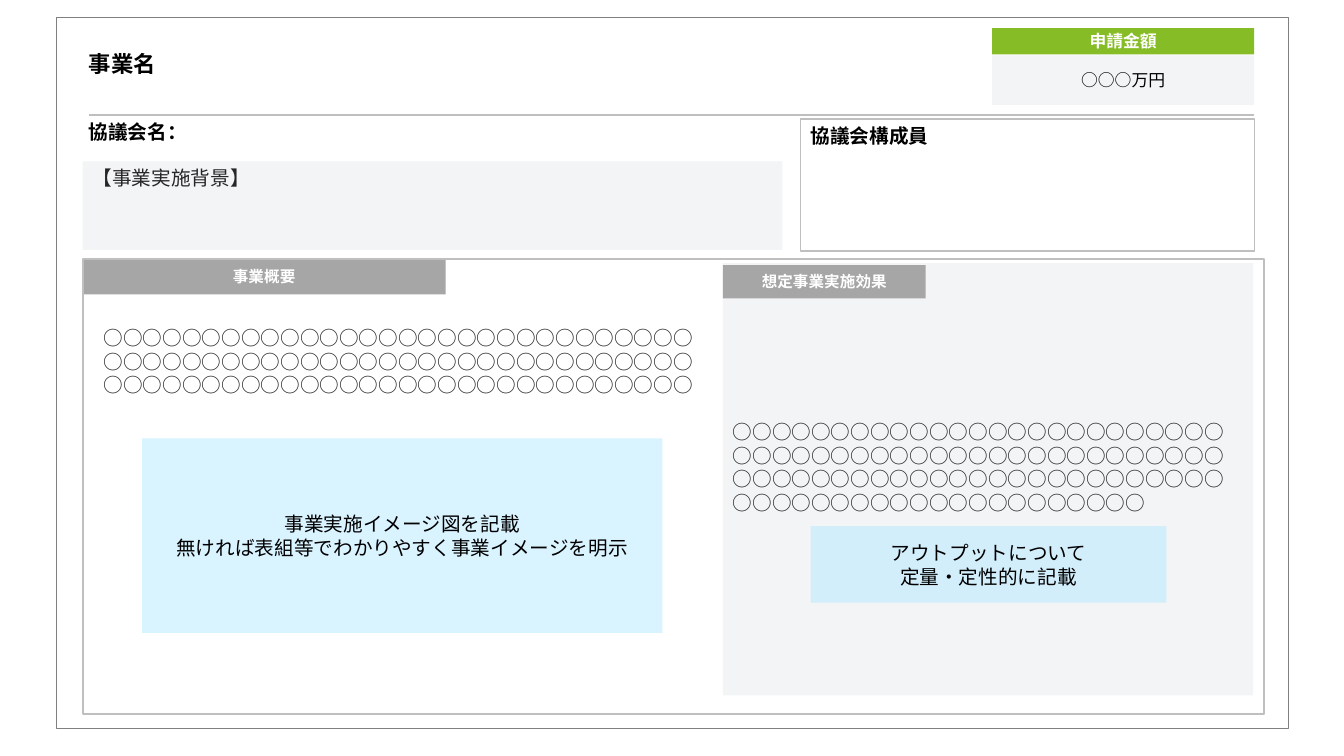
"""Build a one-page project application summary slide."""
from lxml import etree
from pptx import Presentation
from pptx.dml.color import RGBColor
from pptx.enum.shapes import MSO_CONNECTOR, MSO_SHAPE
from pptx.enum.text import MSO_ANCHOR, MSO_AUTO_SIZE, PP_ALIGN
from pptx.oxml.ns import qn
from pptx.util import Pt

PX = 9144
FONT = "Noto Sans CJK JP"
LEFT, CENTER = PP_ALIGN.LEFT, PP_ALIGN.CENTER
TOP, MIDDLE = MSO_ANCHOR.TOP, MSO_ANCHOR.MIDDLE
RECTANGLE, STRAIGHT = MSO_SHAPE.RECTANGLE, MSO_CONNECTOR.STRAIGHT
NO_AUTOFIT = MSO_AUTO_SIZE.NONE
TITLE_ONLY = 5
COLORS = {
    "panel": "F2F4F6", "tab": "A6A6A6", "amount": "86BC25", "figure": "BCEBFF",
    "rule": "BFBFBF", "frame": "808080", "black": "000000", "body": "262626",
    "white": "FFFFFF",
}


def rgb(name):
    return RGBColor.from_string(COLORS[name])


def emu(box):
    return [length * PX for length in box]


def write(holder, lines, size, color="black", bold=False, align=LEFT,
          anchor=TOP, margins=(10, 5, 10, 5)):
    frame = holder.text_frame
    frame.word_wrap = True
    frame.auto_size = NO_AUTOFIT
    frame.vertical_anchor = anchor
    (frame.margin_left, frame.margin_top,
     frame.margin_right, frame.margin_bottom) = emu(margins)
    for index, line in enumerate(lines):
        paragraph = frame.add_paragraph() if index else frame.paragraphs[0]
        paragraph.alignment = align
        run = paragraph.add_run()
        run.text = line
        run.font.size = Pt(size)
        run.font.bold = bold
        run.font.color.rgb = rgb(color)
        run.font.name = FONT
        latin = run.font._element.find(qn("a:latin"))
        east_asian = etree.Element(qn("a:ea"), typeface=FONT)
        latin.addnext(east_asian)


def add_panel(slide, box, fill=None, line=None, weight=1.0, opacity=None):
    panel = slide.shapes.add_shape(RECTANGLE, *emu(box))
    panel.shadow.inherit = False
    if fill:
        panel.fill.solid()
        panel.fill.fore_color.rgb = rgb(fill)
        if opacity:
            tint = panel._element.spPr.find(f".//{qn('a:srgbClr')}")
            etree.SubElement(tint, qn("a:alpha"), val=str(opacity * 1000))
    else:
        panel.fill.background()
    if line:
        panel.line.color.rgb = rgb(line)
        panel.line.width = Pt(weight)
    else:
        panel.line.fill.background()
    return panel


def add_tab(slide, box, label, fill="tab", size=11.1):
    tab = add_panel(slide, box, fill)
    write(tab, [label], size, "white", True, CENTER, MIDDLE)


def add_figure_area(slide, box, lines):
    area = add_panel(slide, box, "figure", opacity=56)
    write(area, lines, 14, align=CENTER, anchor=MIDDLE)


def add_label(slide, box, line, **style):
    write(slide.shapes.add_textbox(*emu(box)), [line], 14, **style)


def add_rule(slide, left, right, y):
    rule = slide.shapes.add_connector(STRAIGHT, *emu((left, y, right, y)))
    rule.line.color.rgb = rgb("rule")
    rule.line.width = Pt(1.5)
    etree.SubElement(rule._element.spPr, qn("a:effectLst"))


def set_title(slide, box, line):
    title = slide.shapes.title
    title.left, title.top, title.width, title.height = emu(box)
    write(title, [line], 16, bold=True, margins=(0, 0, 0, 0))


def main():
    presentation = Presentation()
    presentation.slide_width, presentation.slide_height = emu((1333, 750))
    slide = presentation.slides.add_slide(presentation.slide_layouts[TITLE_ONLY])

    set_title(slide, (88, 50, 896, 27), "事業名")
    amount = add_panel(slide, (984, 55, 260, 49), "panel")
    write(amount, ["○○○万円"], 12, align=CENTER, anchor=MIDDLE)
    background = add_panel(slide, (82, 160, 694, 88), "panel")
    write(background, ["【事業実施背景】"], 14, "body")
    add_rule(slide, 88, 1244, 114)
    add_tab(slide, (82, 257, 360, 35), "事業概要")
    add_label(slide, (88, 119, 688, 24), "協議会名：", bold=True,
              margins=(0, 0, 0, 0))
    add_label(slide, (93, 297, 617, 123), "○" * 90, color="body", anchor=MIDDLE)
    add_panel(slide, (82, 257, 1172, 451), line="rule", weight=1.5)
    members = add_panel(slide, (794, 118, 450, 131), line="rule")
    write(members, ["協議会構成員"], 14, bold=True)
    effects = add_panel(slide, (717, 261, 526, 429), "panel")
    write(effects, ["○" * 96], 14, "body", anchor=MIDDLE,
          margins=(10, 5, 10, 29))
    add_tab(slide, (717, 263, 201, 33), "想定事業実施効果")
    add_tab(slide, (984, 28, 260, 26), "申請金額", "amount", 12)
    add_figure_area(slide, (804, 522, 353, 76),
                    ["アウトプットについて", "定量・定性的に記載"])
    add_figure_area(slide, (141, 435, 516, 193),
                    ["事業実施イメージ図を記載",
                     "無ければ表組等でわかりやすく事業イメージを明示"])
    add_panel(slide, (56, 17, 1222, 705), line="frame", weight=0.25)

    presentation.save("out.pptx")


if __name__ == "__main__":
    main()
